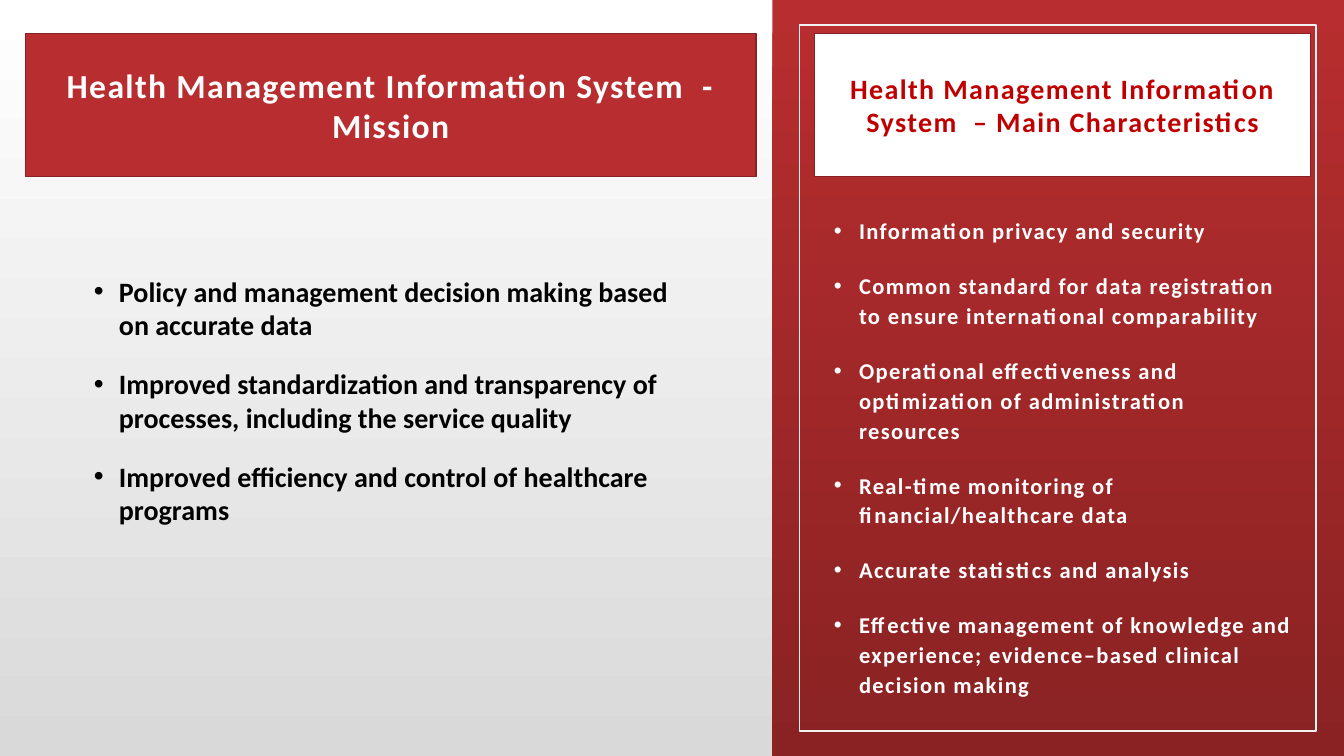
import pptx
import pptx.util
import pptx.dml.color
import pptx.enum.shapes
import pptx.enum.text
import pptx.oxml.ns
import lxml.etree

Inches = pptx.util.Inches
Pt = pptx.util.Pt

COLORS = {
    "red": "B82D2F",
    "dark_red": "8A2223",
    "edge": "882123",
    "heading": "C00000",
    "frame": "F2F2F2",
    "gray": "D9D9D9",
    "white": "FFFFFF",
    "black": "000000",
}

SYSTEM = "Health Management Information System  "

MISSION = [
    "Policy and management decision making based on accurate data",
    "Improved standardization and transparency of processes, including the service quality",
    "Improved efficiency and control of healthcare programs",
]

CHARACTERISTICS = [
    "Information privacy and security",
    "Common standard for data registration to ensure international comparability",
    "Operational effectiveness and optimization of administration resources",
    "Real-time monitoring of financial/healthcare data",
    "Accurate statistics and analysis",
    "Effective management of knowledge and experience; evidence–based clinical decision making",
]


def rgb(name):
    return pptx.dml.color.RGBColor.from_string(COLORS[name])


class SlideBuilder:
    font = "Calibri"
    gap = Pt(18)

    def __init__(self, slide):
        self.s = slide
        self.slots = {sp.placeholder_format.idx: sp for sp in slide.placeholders}

    def gradient(self, fill, colors, angle):
        fill.gradient()
        fill.gradient_angle = angle
        for stop, color, position in zip(fill.gradient_stops, colors, (0, 1)):
            stop.color.rgb = rgb(color)
            stop.position = position

    def outline(self, sp, color, width):
        sp.line.color.rgb = rgb(color)
        sp.line.width = Pt(width)

    def place(self, sp, box):
        sp.left, sp.top, sp.width, sp.height = (Inches(v) for v in box)

    def panel(self, box, level):
        """Add a plain rectangle behind the placeholders, at the given depth."""
        sp = self.s.shapes.add_shape(
            pptx.enum.shapes.MSO_SHAPE.RECTANGLE, *(Inches(v) for v in box))
        sp.shadow.inherit = False
        sp.fill.background()
        sp.line.fill.background()
        sp.element.getparent().insert(2 + level, sp.element)
        return sp

    def text_frame(self, sp, anchor):
        tf = sp.text_frame
        tf.word_wrap = True
        tf.auto_size = pptx.enum.text.MSO_AUTO_SIZE.NONE
        tf.vertical_anchor = anchor
        return tf

    def run(self, p, text, size, color, spacing):
        p.space_before = self.gap
        r = p.add_run()
        r.text = text
        r.font.name = self.font
        r.font.size = Pt(size)
        r.font.bold = True
        r.font.color.rgb = rgb(color)
        r.font.element.set("spc", str(spacing * 100)) if hasattr(r.font, "element") else \
            r.font._element.set("spc", str(spacing * 100))

    def heading(self, idx, box, text, size, color, fill):
        sp = self.slots[idx]
        self.place(sp, box)
        sp.fill.solid()
        sp.fill.fore_color.rgb = rgb(fill)
        self.outline(sp, "edge", 1)
        p = self.text_frame(sp, pptx.enum.text.MSO_ANCHOR.MIDDLE).paragraphs[0]
        p.alignment = pptx.enum.text.PP_ALIGN.CENTER
        self.run(p, text, size, color, 1)

    def bullets(self, idx, box, items, size, color, spacing=0, line_spacing=1.0):
        sp = self.slots[idx]
        self.place(sp, box)
        tf = self.text_frame(sp, pptx.enum.text.MSO_ANCHOR.TOP)
        for i, item in enumerate(items):
            p = tf.add_paragraph() if i else tf.paragraphs[0]
            p.line_spacing = line_spacing
            self.run(p, item, size, color, spacing)
            pPr = p._p.get_or_add_pPr()
            pPr.set("marL", str(Inches(0.25)))
            pPr.set("indent", str(-Inches(0.25)))
            for tag, key, value in (("a:buFont", "typeface", "Arial"),
                                    ("a:buChar", "char", "•")):
                lxml.etree.SubElement(pPr, pptx.oxml.ns.qn(tag)).set(key, value)

    def remove_empty(self):
        for sp in list(self.s.placeholders):
            if not sp.text_frame.text:
                sp.element.getparent().remove(sp.element)


def main():
    prs = pptx.Presentation()
    prs.slide_width = Inches(13.33)
    prs.slide_height = Inches(7.5)
    comparison = prs.slide_layouts[4]
    b = SlideBuilder(prs.slides.add_slide(comparison))

    b.gradient(b.s.background.fill, ("gray", "white"), 90)
    side = b.panel((7.66, 0, 5.67, 7.5), 0)
    b.gradient(side.fill, ("red", "dark_red"), 270)
    frame = b.panel((7.93, 0.25, 5.12, 7), 1)
    b.outline(frame, "frame", 1.25)

    b.heading(0, (0.25, 0.33, 7.25, 1.42), SYSTEM + "- Mission", 24, "white", "red")
    b.heading(3, (8.08, 0.33, 4.92, 1.42), SYSTEM + "– Main Characteristics",
              20, "heading", "white")
    b.bullets(2, (0.83, 2.67, 5.92, 4.12), MISSION, 20, "black")
    b.bullets(4, (8.17, 2.08, 4.75, 5), CHARACTERISTICS, 16.1, "white",
              spacing=1, line_spacing=1.1)
    b.remove_empty()
    prs.save("out.pptx")


if __name__ == "__main__":
    main()
